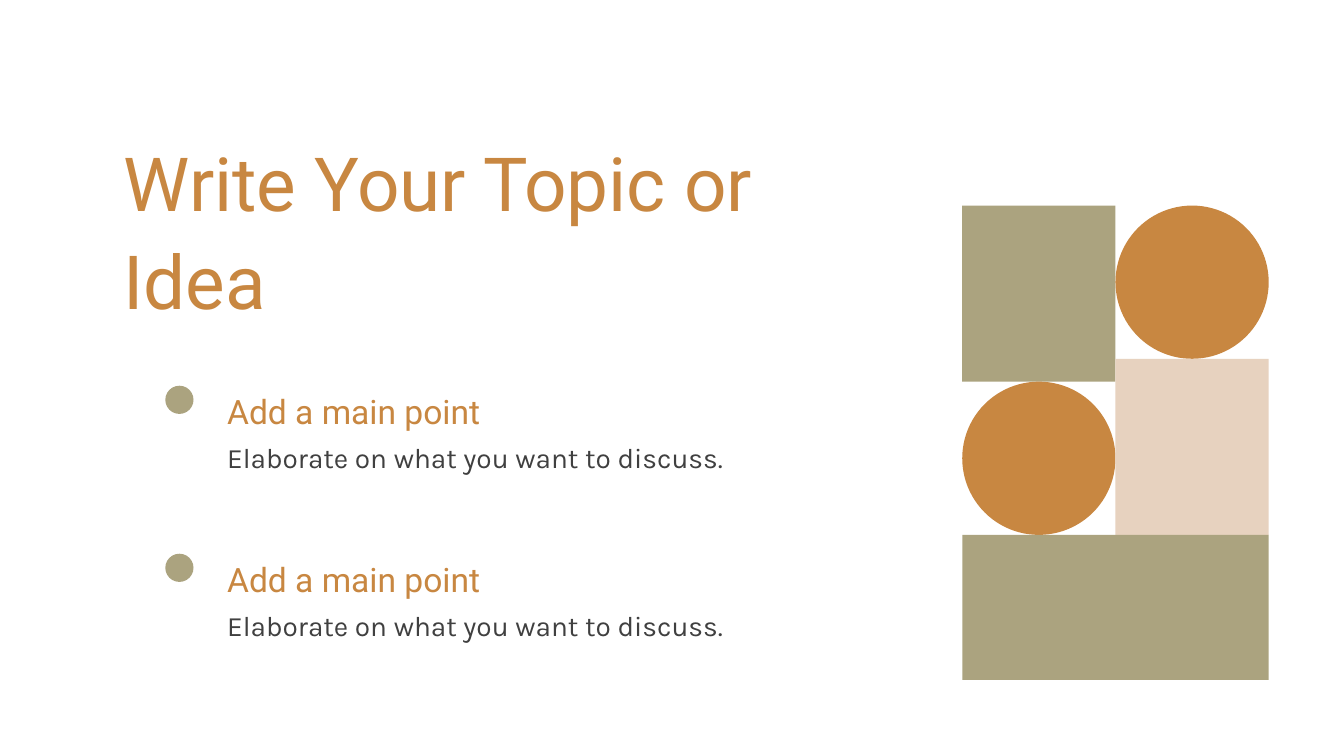
from lxml import etree
from pptx import Presentation
from pptx.dml.color import RGBColor
from pptx.enum.shapes import MSO_SHAPE
from pptx.enum.text import MSO_ANCHOR, MSO_AUTO_SIZE, PP_ALIGN
from pptx.oxml.ns import qn
from pptx.util import Inches, Pt

RECTANGLE, OVAL = MSO_SHAPE.RECTANGLE, MSO_SHAPE.OVAL
TOP, LEFT = MSO_ANCHOR.TOP, PP_ALIGN.LEFT
GROW = MSO_AUTO_SIZE.SHAPE_TO_FIT_TEXT

OCHRE = RGBColor(0xC8, 0x87, 0x41)
OLIVE = RGBColor(0xAB, 0xA3, 0x7F)
SAND = RGBColor(0xE7, 0xD2, 0xBF)
CHARCOAL = RGBColor(0x40, 0x40, 0x40)

COMPARISON_LAYOUT = 4  # a title and two pairs of heading and body


class TopicSlide:
    heading_font = "Roboto"
    body_font = "Karla"

    def __init__(self, prs):
        self.slide = prs.slides.add_slide(prs.slide_layouts[COMPARISON_LAYOUT])

    def shape(self, kind, left, top, width, height, color):
        shape = self.slide.shapes.add_shape(
            kind, Inches(left), Inches(top), Inches(width), Inches(height))
        shape.shadow.inherit = False
        shape.fill.solid()
        shape.fill.fore_color.rgb = color
        shape.line.fill.background()

    def text(self, index, content, box, font, size, color, spacing):
        holder = self.slide.placeholders[index]
        holder.left, holder.top, holder.width, holder.height = map(Inches, box)
        frame = holder.text_frame
        frame.margin_left = frame.margin_right = 0
        frame.margin_top = frame.margin_bottom = 0
        frame.vertical_anchor = TOP
        frame.word_wrap = True
        frame.auto_size = GROW
        frame.text = content
        paragraph = frame.paragraphs[0]
        paragraph.alignment = LEFT
        paragraph.line_spacing = spacing
        paragraph.space_before = Pt(0)
        # No bullet and no hanging indent
        properties = paragraph._p.get_or_add_pPr()
        properties.set("marL", "0")
        properties.set("indent", "0")
        etree.SubElement(properties, qn("a:buNone"))
        run_font = paragraph.runs[0].font
        run_font.name = font
        run_font.size = Pt(size)
        run_font.bold = False
        run_font.color.rgb = color

    def title(self, content):
        self.text(0, content, (0.92, 0.95, 4.76, 1.41),
                  self.heading_font, 40, OCHRE, 1.1)

    def point(self, index, top, heading, detail):
        self.shape(OVAL, 1.23, top + 0.05, 0.21, 0.21, OLIVE)
        self.text(index, heading, (1.69, top, 3.99, 0.3),
                  self.heading_font, 18, OCHRE, 1.3)
        self.text(index + 1, detail, (1.69, top + 0.36, 3.99, 0.25),
                  self.body_font, 15, CHARCOAL, 1.4)


def main():
    prs = Presentation()
    prs.slide_width = Inches(10)
    prs.slide_height = prs.slide_width * 9 // 16
    topic = TopicSlide(prs)

    # Block pattern: two columns on a wide base
    left, top, unit, tall = 7.16, 1.53, 1.14, 1.31
    right = left + unit
    topic.shape(RECTANGLE, left, top, unit, tall, OLIVE)
    topic.shape(OVAL, left, top + tall, unit, unit, OCHRE)
    topic.shape(OVAL, right, top, unit, unit, OCHRE)
    topic.shape(RECTANGLE, right, top + unit, unit, tall, SAND)
    topic.shape(RECTANGLE, left, top + unit + tall, 2 * unit, 1.08, OLIVE)

    # Title and main points
    topic.title("Write Your Topic or Idea")
    for number in range(2):
        topic.point(1 + 2 * number, 2.82 + 1.25 * number, "Add a main point",
                    "Elaborate on what you want to discuss.")

    prs.save("out.pptx")


if __name__ == "__main__":
    main()
